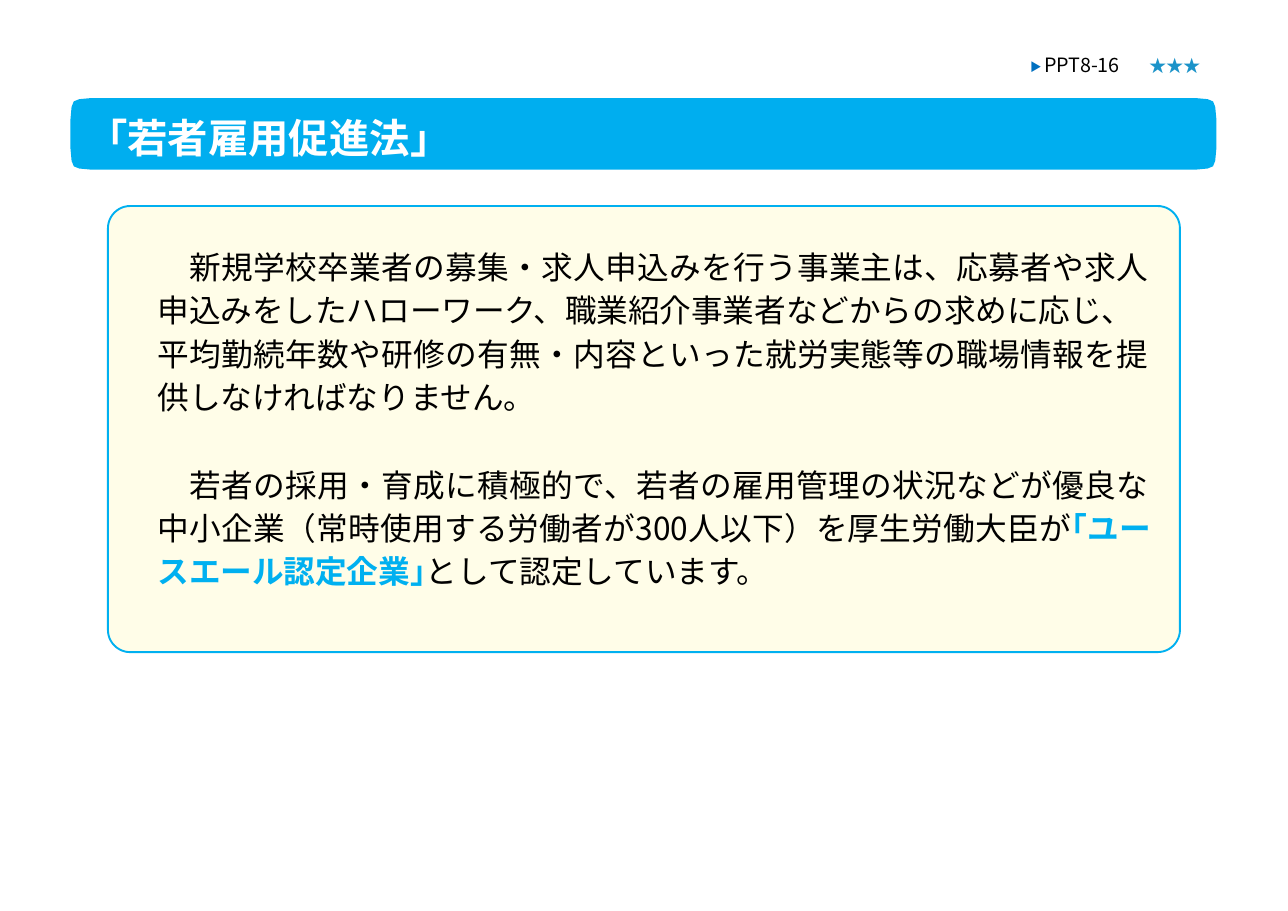
from dataclasses import dataclass

from pptx import Presentation
from pptx.dml.color import RGBColor
from pptx.enum.shapes import MSO_SHAPE
from pptx.enum.text import MSO_ANCHOR, PP_ALIGN as Align
from pptx.oxml.ns import qn
from pptx.shapes.base import BaseShape
from pptx.slide import Slide
from pptx.util import Pt

PX = 9144  # EMU in one px, 100 px to the inch


@dataclass(frozen=True)
class Theme:
    font: str = "Noto Sans CJK JP"
    black: str = "000000"
    white: str = "FFFFFF"
    banner: str = "00AEEF"
    accent: str = "00B0F0"
    panel: str = "FFFDE8"
    marker: str = "0070C0"
    star: str = "1B93C9"
    title_size: float = 26.4
    body_size: float = 20.7
    label_size: float = 12.9
    star_size: float = 11.3


@dataclass(frozen=True)
class Box:
    left: int
    top: int
    width: int
    height: int

    def emu(self) -> tuple[int, int, int, int]:
        return self.left * PX, self.top * PX, self.width * PX, self.height * PX


@dataclass(frozen=True)
class Run:
    text: str
    color: str = Theme.black
    bold: bool = False
    baseline: int = 0


@dataclass(frozen=True)
class Para:
    runs: tuple[Run, ...]
    space_before: float = 0


THEME = Theme()
BANNER = Box(64, 89, 1040, 65)
BANNER_CORNER = ((19, 0), (8, 1), (3, 3), (1, 8), (0, 19))
PANEL = Box(98, 187, 973, 405)

BODY = (
    Para((Run("　新規学校卒業者の募集・求人申込みを行う事業主は、応募者や求人"
              "申込みをしたハローワーク、職業紹介事業者などからの求めに応じ、"),)),
    Para((Run("平均勤続年数や研修の有無・内容といった就労実態等の職場情報を"
              "提供しなければなりません。"),), space_before=0.8),
    Para((Run("　若者の採用・育成に積極的で、若者の雇用管理の状況などが優良な"
              "中小企業（常時使用する労働者が300人以下）を厚生労働大臣が"),
          Run("｢ユースエール認定企業｣", THEME.accent, bold=True),
          Run("として認定しています。")), space_before=29),
)


def paint(shape: BaseShape, fill: str, line: str | None = None) -> None:
    shape.shadow.inherit = False
    shape.fill.solid()
    shape.fill.fore_color.rgb = RGBColor.from_string(fill)
    if line:
        shape.line.color.rgb = RGBColor.from_string(line)
        shape.line.width = Pt(1.25)
    else:
        shape.line.fill.background()


def add_banner(slide: Slide, box: Box) -> None:
    """Draw a bar whose four corners mirror one cut-off outline."""
    right, bottom = box.left + box.width, box.top + box.height
    inward = BANNER_CORNER[::-1]
    points = [(box.left + x, box.top + y) for x, y in BANNER_CORNER]
    points += [(box.left + x, bottom - y) for x, y in inward]
    points += [(right - x, bottom - y) for x, y in BANNER_CORNER]
    points += [(right - x, box.top + y) for x, y in inward]
    builder = slide.shapes.build_freeform(*points[0], scale=PX)
    builder.add_line_segments(points[1:], close=True)
    paint(builder.convert_to_shape(), THEME.banner)


def add_panel(slide: Slide, box: Box) -> None:
    panel = slide.shapes.add_shape(MSO_SHAPE.ROUNDED_RECTANGLE, *box.emu())
    panel.adjustments[0] = 0.05
    paint(panel, THEME.panel, THEME.accent)


def add_text(slide: Slide, box: Box, paras: tuple[Para, ...], *, size: float,
             line: float, align: Align = Align.LEFT, wrap: bool = True) -> None:
    frame = slide.shapes.add_textbox(*box.emu()).text_frame
    frame.word_wrap = wrap
    frame.vertical_anchor = MSO_ANCHOR.TOP
    frame.margin_left = frame.margin_right = 0
    frame.margin_top = frame.margin_bottom = 0
    for index, para in enumerate(paras):
        paragraph = frame.add_paragraph() if index else frame.paragraphs[0]
        paragraph.alignment = align
        paragraph.line_spacing = Pt(line)
        paragraph.space_before = Pt(para.space_before)
        for item in para.runs:
            run = paragraph.add_run()
            run.text = item.text
            font = run.font
            font.name, font.size, font.bold = THEME.font, Pt(size), item.bold
            font.color.rgb = RGBColor.from_string(item.color)
            properties = run._r.get_or_add_rPr()
            properties.set("lang", "ja-JP")
            if item.baseline:
                properties.set("baseline", str(item.baseline * 1000))
            east_asian = properties.makeelement(qn("a:ea"), {"typeface": THEME.font})
            properties.find(qn("a:latin")).addnext(east_asian)


def main() -> None:
    presentation = Presentation()
    presentation.slide_width, presentation.slide_height = 1169 * PX, 827 * PX
    slide = presentation.slides.add_slide(presentation.slide_layouts[6])

    add_panel(slide, PANEL)
    add_text(slide, Box(143, 220, 900, 318), BODY,
             size=THEME.body_size, line=28.2, align=Align.JUSTIFY)
    add_banner(slide, BANNER)
    title = Para((Run("「若者雇用促進法」", THEME.white, bold=True),))
    add_text(slide, Box(79, 100, 933, 46), (title,),
             size=THEME.title_size, line=33.9)
    label = Para((Run("▶ ", THEME.marker, baseline=9), Run("PPT8-16")))
    add_text(slide, Box(935, 47, 108, 23), (label,),
             size=THEME.label_size, line=16.4)
    stars = Para((Run("★★★", THEME.star),))
    add_text(slide, Box(1043, 49, 48, 20), (stars,),
             size=THEME.star_size, line=14.1, wrap=False)

    presentation.save("out.pptx")


if __name__ == "__main__":
    main()
